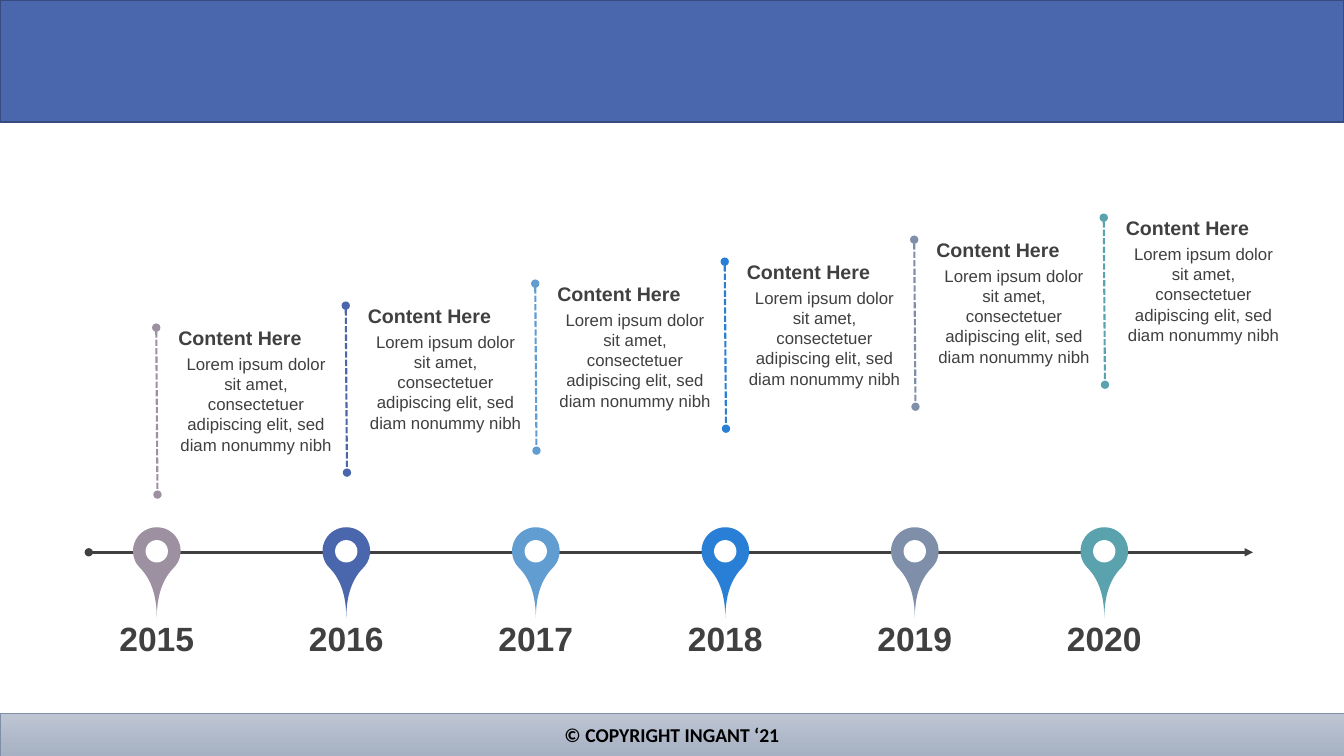
from lxml.etree import SubElement
from pptx import Presentation
from pptx.dml.color import RGBColor
from pptx.enum.dml import MSO_LINE
from pptx.enum.shapes import MSO_CONNECTOR, MSO_SHAPE
from pptx.enum.text import MSO_ANCHOR, MSO_AUTO_SIZE, PP_ALIGN
from pptx.oxml.ns import qn
from pptx.util import Pt

WIDE, HIGH = 960, 540
DARK, WHITE = "404040", "FFFFFF"
COLORS = ["9D90A0", "4A66AC", "629DD1", "297FD5", "7F8FA9", "5AA2AE"]
LOREM = ("Lorem ipsum dolor sit amet, consectetuer adipiscing elit, "
         "sed diam nonummy nibh")
FIRST, PITCH = 112, 135.36
NOTE_TOP, RISE = 234, 15.7
AXIS = 394.5


def rgb(code):
    """Turn a hex string into a colour."""
    return RGBColor.from_string(code)


def write(frame, text, size=12, bold=False, color=DARK, font="Arial",
          align=PP_ALIGN.CENTER):
    """Put one formatted paragraph into a text frame."""
    para = frame.paragraphs[0]
    para.alignment = align
    run = para.add_run()
    run.text = text
    run.font.name = font
    run.font.size = Pt(size)
    run.font.bold = bold
    run.font.color.rgb = rgb(color)


def label(shapes, text, left, top, width, height, inset=(7.2, 3.6), **look):
    """Add a wrapped text box that grows with its text."""
    frame = shapes.add_textbox(Pt(left), Pt(top), Pt(width), Pt(height)).text_frame
    frame.word_wrap = True
    frame.auto_size = MSO_AUTO_SIZE.SHAPE_TO_FIT_TEXT
    frame.margin_left = frame.margin_right = Pt(inset[0])
    frame.margin_top = frame.margin_bottom = Pt(inset[1])
    write(frame, text, **look)


def block(shapes, kind, left, top, width, height, fill, edge=None, weight=1):
    """Add a filled preset shape with an optional outline."""
    shape = shapes.add_shape(kind, Pt(left), Pt(top), Pt(width), Pt(height))
    shape.shadow.inherit = False
    shape.fill.solid()
    shape.fill.fore_color.rgb = rgb(fill)
    if edge:
        shape.line.color.rgb = rgb(edge)
        shape.line.width = Pt(weight)
    else:
        shape.line.fill.background()
    return shape


def rule(shapes, start, end, color, weight, tail, dash=None):
    """Add a line with a round head and the given tail."""
    line = shapes.add_connector(MSO_CONNECTOR.STRAIGHT, *map(Pt, start + end))
    line.line.color.rgb = rgb(color)
    line.line.width = Pt(weight)
    if dash:
        line.line.dash_style = dash
    props = line.element.spPr
    stroke = props.find(qn("a:ln"))
    SubElement(stroke, qn("a:headEnd"), type="oval")
    SubElement(stroke, qn("a:tailEnd"), type=tail)
    SubElement(props, qn("a:effectLst"))


def footer(shapes):
    """Add the shaded copyright bar."""
    bar = block(shapes, MSO_SHAPE.RECTANGLE, 0, 509.3, WIDE, 30.7,
                WHITE, "7F8FA9", 0.5)
    bar.fill.gradient()
    bar.fill.gradient_angle = 270
    for stop, code in zip(bar.fill.gradient_stops, ["BEC5D2", "A6B1C3"]):
        stop.color.rgb = rgb(code)
    bar.text_frame.vertical_anchor = MSO_ANCHOR.MIDDLE
    write(bar.text_frame, "© COPYRIGHT INGANT ‘21", size=14, bold=True,
          color="000000", font="Calibri")


def pin(shapes, mid, year, color):
    """Add a map pin on the axis with its year below."""
    drop = block(shapes, MSO_SHAPE.TEAR, mid - 17, 376.6, 34, 34, color)
    drop.adjustments[0] = 2
    drop.rotation = 135
    label(shapes, str(year), mid - 43.2, 441.4, 86.4, 29, inset=(0, 0),
          size=24, bold=True)
    block(shapes, MSO_SHAPE.OVAL, mid - 8, 385.8, 16, 16, WHITE)


def note(shapes, mid, top, color):
    """Add a grouped heading and text beside a dashed line."""
    parts = shapes.add_group_shape().shapes
    label(parts, LOREM, mid + 9, top + 15.1, 123.8, 80)
    label(parts, "Content Here", mid + 6.8, top - 4.8, 124.6, 24.5,
          inset=(8.6, 3.6), size=14, bold=True, align=PP_ALIGN.LEFT)
    rule(parts, (mid - 0.4, top), (mid + 0.5, top + 119.3), color, 1.5,
         "oval", MSO_LINE.SQUARE_DOT)


def main():
    """Build the timeline slide."""
    deck = Presentation()
    deck.slide_width, deck.slide_height = Pt(WIDE), Pt(HIGH)
    shapes = deck.slides.add_slide(deck.slide_layouts[6]).shapes
    block(shapes, MSO_SHAPE.RECTANGLE, 0, 0, WIDE, 87.1, "4A66AC", "374B7F")
    footer(shapes)
    rule(shapes, (63.4, AXIS), (895, AXIS), DARK, 1.75, "triangle")
    for i, color in enumerate(COLORS):
        mid = FIRST + i * PITCH
        pin(shapes, mid, 2015 + i, color)
        note(shapes, mid, NOTE_TOP - i * RISE, color)
    deck.save("out.pptx")


if __name__ == "__main__":
    main()
